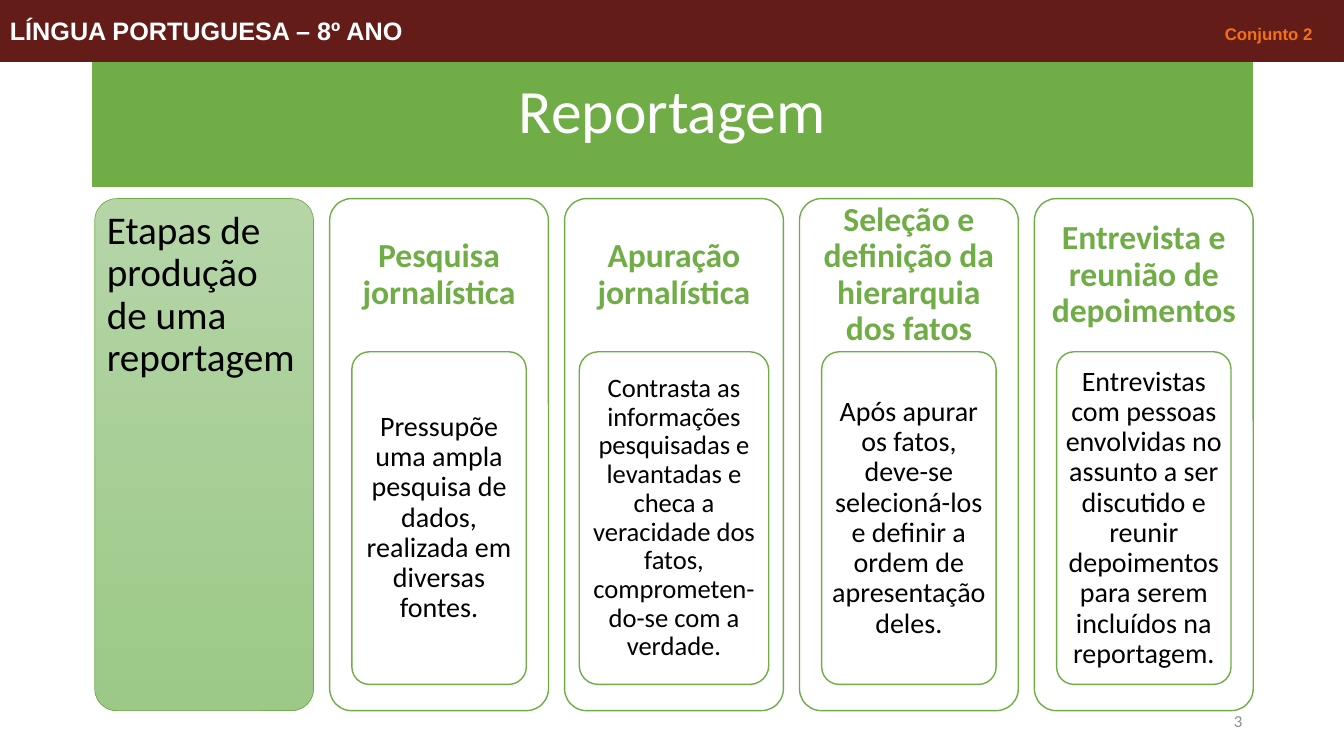
"""Build a slide on the production stages of a news report."""
from lxml import etree
from pptx import Presentation
from pptx.dml.color import RGBColor
from pptx.enum.shapes import MSO_SHAPE as SHAPE
from pptx.enum.text import MSO_ANCHOR as ANCHOR, PP_ALIGN as ALIGN
from pptx.oxml.ns import qn
from pptx.util import Inches, Pt

GREEN = RGBColor(0x70, 0xAD, 0x47)
GREEN_TOP = RGBColor(0xB5, 0xD5, 0xA7)
GREEN_BOTTOM = RGBColor(0x9C, 0xC9, 0x87)
MAROON = RGBColor(0x63, 0x1C, 0x18)
ORANGE = RGBColor(0xF4, 0x71, 0x16)
GRAY = RGBColor(0x8C, 0x8C, 0x8C)
WHITE = RGBColor(0xFF, 0xFF, 0xFF)
BLACK = RGBColor(0, 0, 0)

LEFT, TOP, CARD_W, CARD_H, STEP = 0.94, 1.97, 2.17, 5.08, 2.33
HEAD_H, BODY_H = 1.52, 3.3

STAGES = [
    ("Pesquisa jornalística",
     "Pressupõe uma ampla pesquisa de dados, realizada em diversas fontes.",
     1.73, 20),
    ("Apuração jornalística",
     "Contrasta as informações pesquisadas e levantadas e checa a veracidade "
     "dos fatos, comprometen-do-se com a verdade.", 1.88, 19),
    ("Seleção e definição da hierarquia dos fatos",
     "Após apurar os fatos, deve-se selecioná-los e definir a ordem de "
     "apresentação deles.", 1.73, 20),
    ("Entrevista e reunião de depoimentos",
     "Entrevistas com pessoas envolvidas no assunto a ser discutido e reunir "
     "depoimentos para serem incluídos na reportagem.", 1.73, 20),
]


def add_run(p, text, size, color, bold=False, name="Calibri"):
    """Append a formatted run to a paragraph."""
    r = p.add_run()
    r.text = text
    font = {"name": name, "size": Pt(size), "bold": bold}
    for key, value in font.items():
        setattr(r.font, key, value)
    r.font.color.rgb = color


def set_frame(s, align, anchor=ANCHOR.MIDDLE, inset=(0.1, 0.05), spacing=0.9):
    """Format the text frame of a shape and return its first paragraph."""
    dx, dy = (Inches(v) for v in inset)
    frame = {"word_wrap": True, "vertical_anchor": anchor, "margin_left": dx,
             "margin_right": dx, "margin_top": dy, "margin_bottom": dy}
    tf = s.text_frame
    for key, value in frame.items():
        setattr(tf, key, value)
    p = tf.paragraphs[0]
    p.alignment = align
    p.line_spacing = spacing
    return p


def add_box(slide, kind, box, fill, line, width=1):
    """Add a filled, outlined shape without a shadow."""
    s = slide.shapes.add_shape(kind, *map(Inches, box))
    s.shadow.inherit = False
    s.fill.solid()
    s.fill.fore_color.rgb = fill
    s.line.color.rgb = line
    s.line.width = Pt(width)
    if kind == SHAPE.ROUNDED_RECTANGLE:
        s.adjustments[0] = 0.1
    return s


def add_text(slide, box, text, size, color, align, bold=False, **frame):
    """Add a text box with a single paragraph."""
    s = slide.shapes.add_textbox(*map(Inches, box))
    add_run(set_frame(s, align, **frame), text, size, color, bold)


def add_intro(slide):
    """Add the gradient panel that names the topic."""
    s = add_box(slide, SHAPE.ROUNDED_RECTANGLE, (LEFT, TOP, CARD_W, CARD_H),
                GREEN_TOP, GREEN, 0.5)
    s.fill.gradient()
    s.fill.gradient_angle = 270
    for stop, color in zip(s.fill.gradient_stops, (GREEN_TOP, GREEN_BOTTOM)):
        stop.color.rgb = color
    add_text(slide, (LEFT, TOP, CARD_W, HEAD_H),
             "Etapas de produção de uma reportagem", 28, BLACK, ALIGN.LEFT,
             anchor=ANCHOR.TOP, inset=(0.12, 0.12))


def add_stage(slide, x, heading, body, body_w, size):
    """Add a stage card with its heading and inner box."""
    add_box(slide, SHAPE.ROUNDED_RECTANGLE, (x, TOP, CARD_W, CARD_H),
            WHITE, GREEN)
    add_text(slide, (x, TOP, CARD_W, HEAD_H), heading, 24, GREEN,
             ALIGN.CENTER, bold=True, inset=(0.1, 0.1))
    s = add_box(slide, SHAPE.ROUNDED_RECTANGLE,
                (x + (CARD_W - body_w) / 2, TOP + HEAD_H, body_w, BODY_H),
                WHITE, GREEN)
    p = set_frame(s, ALIGN.CENTER, inset=(0.04, 0.04))
    add_run(p, body, size, BLACK)


def add_header(slide):
    """Add the top band with a right-aligned tab for the set label."""
    s = add_box(slide, SHAPE.RECTANGLE, (0, 0, 13.33, 0.61), MAROON, MAROON,
                0.75)
    p = set_frame(s, ALIGN.LEFT, spacing=1.0)
    add_run(p, "LÍNGUA PORTUGUESA – 8º ANO\t", 18, WHITE, True, "Arial")
    add_run(p, "Conjunto 2", 12, ORANGE, True, "Arial")
    tabs = etree.SubElement(p._p.get_or_add_pPr(), qn("a:tabLst"))
    etree.SubElement(tabs, qn("a:tab"), pos=str(Inches(12.92)), algn="r")


def main():
    """Build the slide and save it."""
    prs = Presentation()
    prs.slide_width, prs.slide_height = Inches(13.33), Inches(7.5)
    slide = prs.slides.add_slide(prs.slide_layouts[6])
    title = add_box(slide, SHAPE.RECTANGLE, (0.92, 0.4, 11.5, 1.45),
                    GREEN, GREEN)
    add_run(set_frame(title, ALIGN.CENTER), "Reportagem", 44, WHITE)
    add_intro(slide)
    for i, stage in enumerate(STAGES, 1):
        add_stage(slide, LEFT + i * STEP, *stage)
    add_text(slide, (9.42, 6.95, 3, 0.4), "3", 12, GRAY, ALIGN.RIGHT,
             spacing=1.0)
    add_header(slide)
    prs.save("out.pptx")


if __name__ == "__main__":
    main()
